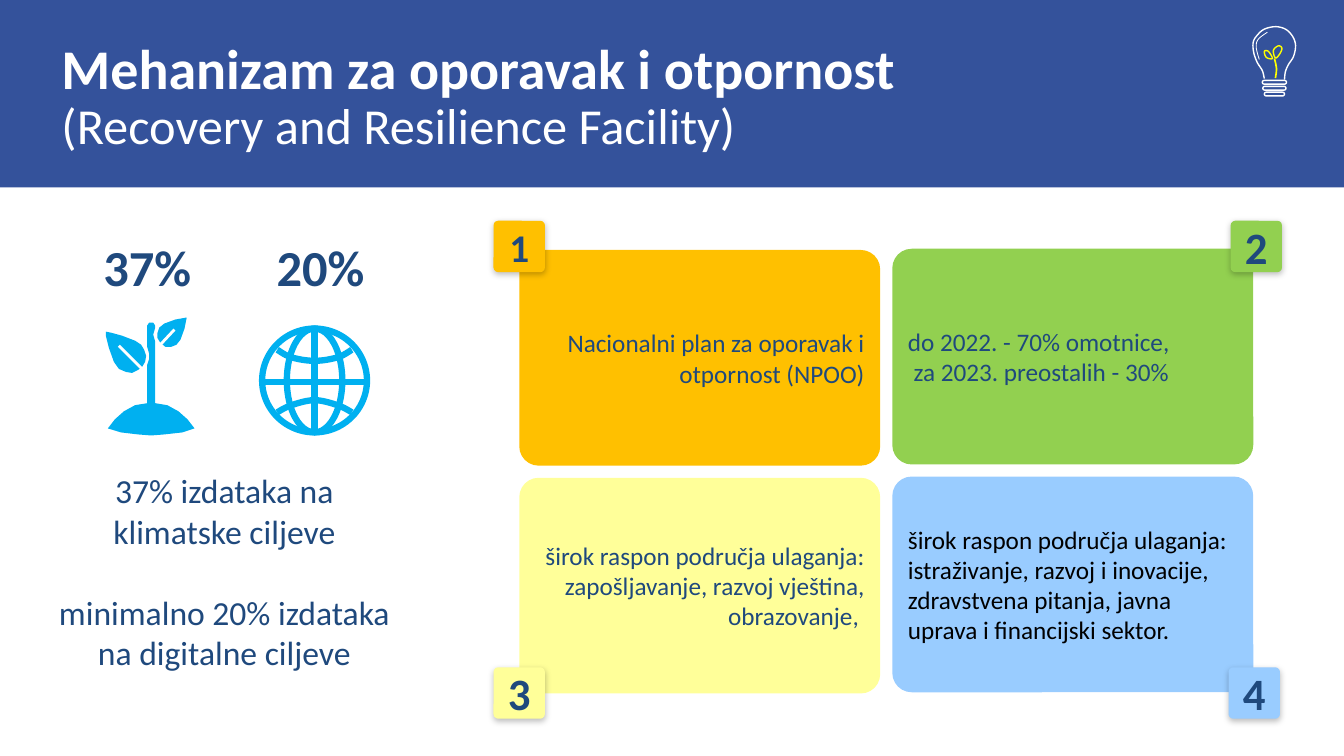
import lxml.etree
import pptx
import pptx.dml.color
import pptx.enum.shapes
import pptx.enum.text
import pptx.oxml.ns
import pptx.util

RGB = pptx.dml.color.RGBColor
SHAPE = pptx.enum.shapes.MSO_SHAPE
ALIGN = pptx.enum.text.PP_ALIGN
ANCHOR = pptx.enum.text.MSO_ANCHOR
qn = pptx.oxml.ns.qn

WHITE = RGB(0xFF, 0xFF, 0xFF)
BLACK = RGB(0x00, 0x00, 0x00)
BLUE = RGB(0x34, 0x52, 0x9B)
NAVY = RGB(0x1F, 0x49, 0x7D)
CYAN = RGB(0x00, 0xB0, 0xF0)
AMBER = RGB(0xFF, 0xC0, 0x00)
GREEN = RGB(0x92, 0xD0, 0x50)
CREAM = RGB(0xFF, 0xFF, 0x99)
SKY = RGB(0x99, 0xCC, 0xFF)
YELLOW = RGB(0xFF, 0xFF, 0x00)

WIDTH, HEIGHT = pptx.util.Inches(13.33), pptx.util.Inches(7.5)
COLUMNS, ROWS = 133.3, 75


def write(para, text, size=18, color=NAVY, bold=False, align=None):
    """Append a formatted run to a paragraph."""
    if align is not None:
        para.alignment = align
    span = para.add_run()
    span.text = text
    span.font.name = "Calibri"
    span.font.size = pptx.util.Pt(size)
    span.font.color.rgb = color
    span.font.bold = bold


def smooth(points, closed=False, steps=6):
    """Return points on a Catmull-Rom curve through the given points."""
    count = len(points)

    def at(i):
        return points[i % count] if closed else points[max(0, min(i, count - 1))]

    curve = []
    for i in range(count if closed else count - 1):
        for step in range(steps):
            t = step / steps
            curve.append(tuple(
                0.5 * (2 * b + (c - a) * t + (2 * a - 5 * b + 4 * c - d) * t ** 2
                       + (3 * b - a - 3 * c + d) * t ** 3)
                for a, b, c, d in zip(at(i - 1), at(i), at(i + 1), at(i + 2))))
    return curve if closed else curve + [points[-1]]


class Page:
    """One slide on a grid of columns and rows, with its text insets."""

    def __init__(self, slide):
        self.slide = slide
        self.shapes = slide.shapes

    def x(self, columns):
        return round(WIDTH * columns / COLUMNS)

    def y(self, rows):
        return round(HEIGHT * rows / ROWS)

    def area(self, left, top, width, height):
        return self.x(left), self.y(top), self.x(width), self.y(height)

    def paint(self, shape, fill=None, line=None, weight=1):
        shape.shadow.inherit = False
        if fill is None:
            shape.fill.background()
        else:
            shape.fill.solid()
            shape.fill.fore_color.rgb = fill
        if line is None:
            shape.line.fill.background()
        else:
            shape.line.color.rgb = line
            shape.line.width = pptx.util.Pt(weight)
        return shape

    def shape(self, kind, area, **style):
        return self.paint(self.shapes.add_shape(kind, *self.area(*area)), **style)

    def outline(self, points, closed=True, **style):
        corners = [(self.x(column), self.y(row)) for column, row in points]
        builder = self.shapes.build_freeform(*corners[0], scale=1.0)
        builder.add_line_segments(corners[1:], close=closed)
        return self.paint(builder.convert_to_shape(), **style)

    def line(self, start, end, color, weight):
        line = self.shapes.add_connector(
            pptx.enum.shapes.MSO_CONNECTOR.STRAIGHT,
            self.x(start[0]), self.y(start[1]), self.x(end[0]), self.y(end[1]))
        line.line.color.rgb = color
        line.line.width = pptx.util.Pt(weight)
        lxml.etree.SubElement(line._element.spPr, qn("a:effectLst"))

    def frame(self, shape, inset=None, anchor=ANCHOR.MIDDLE):
        frame = shape.text_frame
        frame.word_wrap = True
        frame.auto_size = pptx.enum.text.MSO_AUTO_SIZE.NONE
        frame.vertical_anchor = anchor
        if inset is not None:
            frame.margin_left = frame.margin_right = self.x(inset)
            frame.margin_top = frame.margin_bottom = self.y(inset)
        return frame

    def placeholder(self, index, area, **layout):
        box = self.slide.placeholders[index]
        box.left, box.top, box.width, box.height = self.area(*area)
        return self.frame(box, **layout)

    def label(self, area, text, **style):
        box = self.shapes.add_textbox(*self.area(*area))
        write(self.frame(box).paragraphs[0], text, **style)

    def card(self, area, fill, lines, **style):
        card = self.shape(SHAPE.ROUNDED_RECTANGLE, area, fill=fill)
        card.adjustments[0] = 0.09
        frame = self.frame(card, inset=1)
        for i, text in enumerate(lines):
            para = frame.add_paragraph() if i else frame.paragraphs[0]
            write(para, text, **style)
        return card

    def badge(self, area, fill, number, size):
        badge = self.card(area, fill, [number], size=size, bold=True, align=ALIGN.CENTER)
        effects = badge._element.spPr.find(qn("a:effectLst"))
        shadow = lxml.etree.SubElement(effects, qn("a:outerShdw"), blurRad="57150",
                                       dist="19050", dir="5400000", rotWithShape="0")
        color = lxml.etree.SubElement(shadow, qn("a:srgbClr"), val="000000")
        lxml.etree.SubElement(color, qn("a:alpha"), val="25000")


def add_header(page):
    band = page.shape(SHAPE.RECTANGLE, (0, 0, COLUMNS, 18.6), fill=BLUE)
    page.shapes._spTree.insert(2, band._element)  # behind the title
    title = page.placeholder(0, (4.8, 2.75, 116.5, 14), inset=1.3, anchor=ANCHOR.TOP)
    para = title.paragraphs[0]
    para.line_spacing = 0.9
    write(para, "Mehanizam za oporavak i otpornost", size=40, color=WHITE, bold=True,
          align=ALIGN.LEFT)
    para.add_line_break()
    lxml.etree.SubElement(para._p[-1], qn("a:rPr"), sz="4000")
    write(para, "(Recovery and Resilience Facility)", size=36, color=WHITE)


def add_bulb(page):
    glass = [(125.4, 7.8), (125.2, 7), (124.7, 6.2), (124.35, 5.2), (124.3, 4.2),
             (124.7, 3.5), (125.4, 2.9), (126.5, 2.65), (127.5, 2.9), (128.2, 3.6),
             (128.5, 4.5), (128.3, 5.6), (127.8, 6.4), (127.5, 7.1), (127.4, 7.9)]
    glint = [(125.7, 3.2), (124.8, 3.9), (124.6, 4.7), (124.9, 5.9)]
    stem = [(126.5, 7.75), (126.6, 6.8), (126.4, 5.8)]
    for points, color, weight in ((glass, WHITE, 1), (glint, WHITE, 0.6), (stem, YELLOW, 1.2)):
        page.outline(smooth(points), closed=False, line=color, weight=weight)
    for left, top, width in ((125.2, 7.98, 2.4), (125.25, 8.57, 2.3), (125.4, 9.15, 2)):
        ring = page.shape(SHAPE.ROUNDED_RECTANGLE, (left, top, width, 0.37),
                          line=WHITE, weight=1)
        ring.adjustments[0] = 0.5
    for leaf in ([(126.5, 5.75), (126.3, 5), (126.8, 4.55), (127.15, 4.8), (126.9, 5.4)],
                 [(126.2, 5.8), (125.6, 5.7), (125.4, 5.1), (125.8, 5.1)]):
        page.outline(smooth(leaf, closed=True), line=YELLOW, weight=1)


def add_seedling(page):
    stem_and_mound = [
        (14.6, 40), (14.6, 36.2), (14.8, 35.6), (14.8, 35.1), (14.6, 34.4), (14.6, 32.3),
        (14.8, 32), (15.2, 32), (15.4, 32.3), (15.4, 32.5), (15.2, 33.2), (15.4, 33.9),
        (15.4, 40), (16.6, 40.2), (17.7, 40.8), (18.6, 41.6), (19.3, 42.5), (18.1, 42.9),
        (16.3, 43.1), (15, 43.2), (13.7, 43.1), (12, 42.9), (10.7, 42.5), (11.4, 41.6),
        (12.3, 40.8), (13.4, 40.2)]
    left_leaf = [(10.5, 32.9), (11, 33), (12.1, 33.3), (13.4, 33.8), (14, 34.2),
                 (14.3, 34.7), (14.5, 35.3), (14.4, 35.9), (14.1, 36.4), (13.7, 36.7),
                 (13.1, 37), (12.5, 36.9), (11.8, 36.6), (11.3, 35.9), (10.8, 34.5),
                 (10.5, 33.3)]
    right_leaf = [(18.5, 31.5), (17.4, 31.7), (16.3, 32.1), (15.8, 32.5), (15.6, 33.1),
                  (15.6, 33.5), (15.9, 34), (16.4, 34.4), (17, 34.4), (17.5, 34.2),
                  (17.9, 33.7), (18.3, 32.6), (18.5, 31.6)]
    for part in (right_leaf, stem_and_mound, left_leaf):
        page.outline(part, fill=CYAN)
    page.line((11.8, 34.3), (14.1, 36.6), WHITE, 2)
    page.line((17.3, 32.7), (15.9, 34.2), WHITE, 2)


def add_globe(page):
    for oval in ((26, 32.6, 10.4, 10.3), (28.45, 32.6, 5.5, 10.3)):
        page.shape(SHAPE.OVAL, oval, line=CYAN, weight=4.5)
    page.line((31.2, 32.6), (31.2, 42.9), CYAN, 4.5)
    page.line((26, 37.9), (36.4, 37.9), CYAN, 4.5)
    for edge, bend, middle in ((34.7, 35.45, 35.8), (40.9, 40.2, 39.7)):
        parallel = [(27.5, edge), (28.9, bend), (31.2, middle), (33.5, bend), (34.9, edge)]
        page.outline(smooth(parallel), closed=False, line=CYAN, weight=4.5)


def add_goals(page):
    for left, share in ((8.5, "37%"), (25.7, "20%")):
        page.label((left, 22.9, 12.2, 7.1), share, size=36, bold=True, align=ALIGN.CENTER)
    body = page.placeholder(1, (4.8, 46.15, 34.9, 21.2), anchor=ANCHOR.TOP)
    goals = ("37% izdataka na klimatske ciljeve", "minimalno 20% izdataka na digitalne ciljeve")
    for i, goal in enumerate(goals):
        para = body.add_paragraph() if i else body.paragraphs[0]
        write(para, goal, size=24, align=ALIGN.CENTER)
        para.space_before = pptx.util.Pt(29 * i)
        properties = para._p.get_or_add_pPr()
        properties.set("marL", "0")
        properties.set("indent", "0")
        lxml.etree.SubElement(properties, qn("a:buNone"))


def add_cards(page):
    cards = (
        (AMBER, NAVY, 28, ["Nacionalni plan za oporavak i otpornost (NPOO)"]),
        (GREEN, NAVY, 32, ["do 2022. - 70% omotnice,", " za 2023. preostalih - 30%"]),
        (CREAM, NAVY, 32, ["širok raspon područja ulaganja: zapošljavanje, razvoj vještina, "
                           "obrazovanje, "]),
        (SKY, BLACK, 32, ["širok raspon područja ulaganja: istraživanje, razvoj i inovacije, "
                          "zdravstvena pitanja, javna uprava i financijski sektor."]))
    for i, (fill, color, size, lines) in enumerate(cards):
        row, column = divmod(i, 2)
        page.card((51.5 + 37 * column, 24.8 - 0.12 * column + 22.6 * row, 35.8, 21.4),
                  fill, lines, color=color, align=ALIGN.LEFT if column else ALIGN.RIGHT)
        page.badge((48.95 + (73.1 - 0.2 * row) * column, 21.9 + 44.3 * row, 5.1, 5.1),
                   fill, str(i + 1), size)


def main():
    deck = pptx.Presentation()
    deck.slide_width, deck.slide_height = WIDTH, HEIGHT
    page = Page(deck.slides.add_slide(deck.slide_layouts[1]))
    for add_part in (add_header, add_bulb, add_goals, add_seedling, add_globe, add_cards):
        add_part(page)
    deck.save("out.pptx")


if __name__ == "__main__":
    main()
